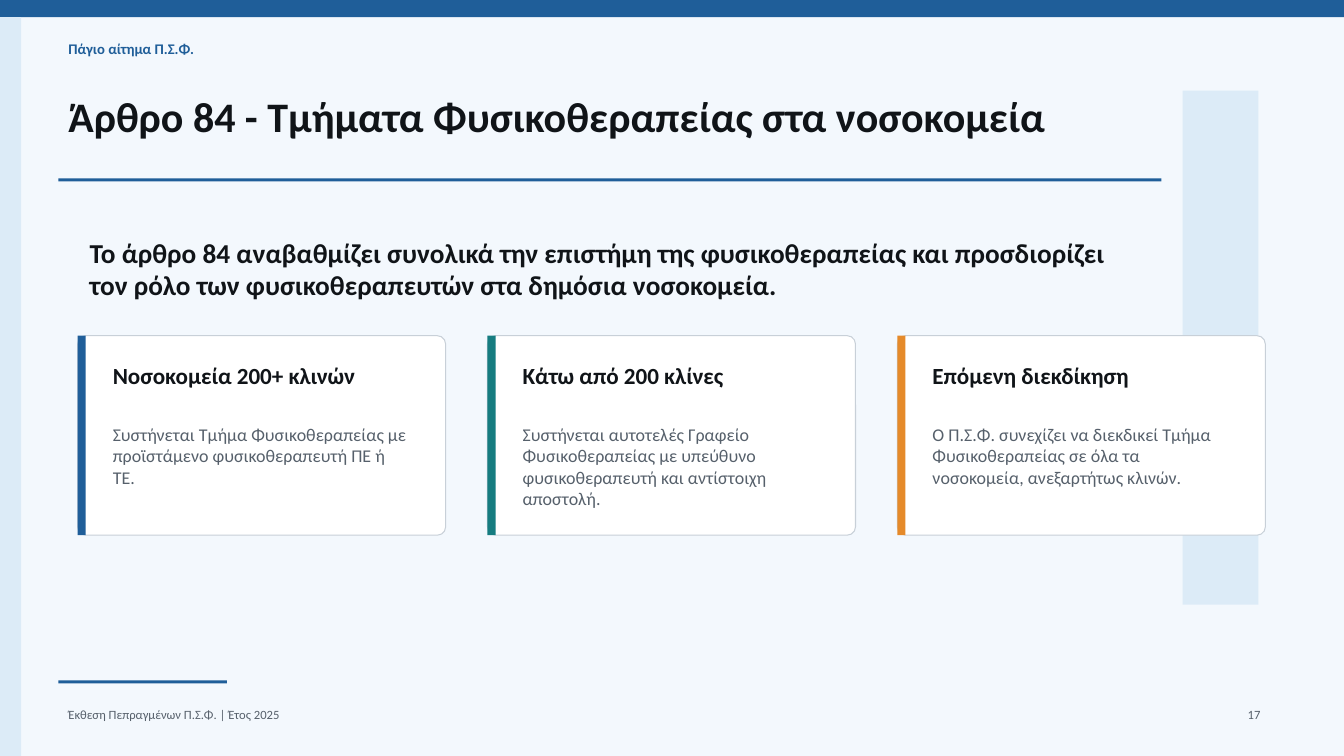
from dataclasses import dataclass

from pptx import Presentation
from pptx import util as u
from pptx.dml.color import RGBColor
from pptx.enum import shapes, text


@dataclass(frozen=True)
class Theme:
    font: str = "Calibri"
    background: str = "F3F8FD"
    blue: str = "1F5E99"
    pale: str = "DCEBF7"
    teal: str = "167C80"
    orange: str = "E58A2A"
    white: str = "FFFFFF"
    border: str = "C8D0D8"
    ink: str = "101418"
    muted: str = "56606B"
    title_size: float = 30
    lead_size: float = 19.5
    heading_size: float = 16.5
    body_size: float = 12.8
    label_size: float = 10.5
    footer_size: float = 9


@dataclass(frozen=True)
class Area:
    left: float
    top: float
    width: float
    height: float

    def lengths(self) -> tuple:
        return tuple(u.Inches(n) for n in (self.left, self.top, self.width, self.height))


@dataclass(frozen=True)
class Band:
    area: Area
    color: str


@dataclass(frozen=True)
class Card:
    heading: str
    body: str
    accent: str


THEME = Theme()
SLIDE_WIDTH, SLIDE_HEIGHT = 13.33, 7.5

BANDS = [
    Band(Area(0, 0, SLIDE_WIDTH, 0.17), THEME.blue),
    Band(Area(0, 0.17, 0.21, 7.33), THEME.pale),
    Band(Area(11.73, 0.9, 0.75, 5.1), THEME.pale),
    Band(Area(0.58, 1.77, 10.94, 0.03), THEME.blue),
    Band(Area(0.58, 6.75, 1.67, 0.03), THEME.blue),
]

CARDS = [
    Card("Νοσοκομεία 200+ κλινών",
         "Συστήνεται Τμήμα Φυσικοθεραπείας με προϊστάμενο φυσικοθεραπευτή ΠΕ ή ΤΕ.",
         THEME.blue),
    Card("Κάτω από 200 κλίνες",
         "Συστήνεται αυτοτελές Γραφείο Φυσικοθεραπείας με υπεύθυνο φυσικοθεραπευτή "
         "και αντίστοιχη αποστολή.",
         THEME.teal),
    Card("Επόμενη διεκδίκηση",
         "Ο Π.Σ.Φ. συνεχίζει να διεκδικεί Τμήμα Φυσικοθεραπείας σε όλα τα νοσοκομεία, "
         "ανεξαρτήτως κλινών.",
         THEME.orange),
]
CARD_ROW = Area(0.77, 3.33, 11.78, 1.98)
CARD_WIDTH = 3.65


def add_block(page, area: Area, fill: str, border: str | None = None,
              radius: float | None = None):
    """Draw a filled rectangle, rounded when a radius ratio is given."""
    kind = shapes.MSO_SHAPE.RECTANGLE if radius is None else shapes.MSO_SHAPE.ROUNDED_RECTANGLE
    block = page.shapes.add_shape(kind, *area.lengths())
    block.shadow.inherit = False
    block.fill.solid()
    block.fill.fore_color.rgb = RGBColor.from_string(fill)
    if radius is not None:
        block.adjustments[0] = radius
    if border is None:
        block.line.fill.background()
    else:
        block.line.color.rgb = RGBColor.from_string(border)
        block.line.width = u.Pt(0.75)
    return block


def add_text(page, area: Area, words: str, *, size: float, color: str = THEME.ink,
             bold: bool = False, align=text.PP_ALIGN.LEFT):
    box = page.shapes.add_textbox(*area.lengths())
    box.text_frame.word_wrap = True
    para = box.text_frame.paragraphs[0]
    para.alignment = align
    span = para.add_run()
    span.text = words
    span.font.name = THEME.font
    span.font.size = u.Pt(size)
    span.font.bold = bold
    span.font.color.rgb = RGBColor.from_string(color)
    return box


def add_card(page, card: Card, left: float) -> None:
    top, height = CARD_ROW.top, CARD_ROW.height
    add_block(page, Area(left, top, CARD_WIDTH, height), THEME.white,
              border=THEME.border, radius=0.042)
    add_block(page, Area(left, top, 0.08, height), card.accent)
    text_left, text_width = left + 0.25, CARD_WIDTH - 0.5
    add_text(page, Area(text_left, top + 0.21, text_width, 0.5), card.heading,
             size=THEME.heading_size, bold=True)
    add_text(page, Area(text_left, top + 0.82, text_width, 1.06), card.body,
             size=THEME.body_size, color=THEME.muted)


def main() -> None:
    deck = Presentation()
    deck.slide_width = u.Inches(SLIDE_WIDTH)
    deck.slide_height = u.Inches(SLIDE_HEIGHT)
    page = deck.slides.add_slide(deck.slide_layouts[6])
    page.background.fill.solid()
    page.background.fill.fore_color.rgb = RGBColor.from_string(THEME.background)

    for band in BANDS:
        add_block(page, band.area, band.color)

    add_text(page, Area(0.58, 0.35, 7.29, 0.29), "Πάγιο αίτημα Π.Σ.Φ.",
             size=THEME.label_size, color=THEME.blue, bold=True)
    add_text(page, Area(0.58, 0.85, 11.67, 0.85),
             "Άρθρο 84 - Τμήματα Φυσικοθεραπείας στα νοσοκομεία",
             size=THEME.title_size, bold=True)
    add_text(page, Area(0.79, 2.29, 10.52, 0.6),
             "Το άρθρο 84 αναβαθμίζει συνολικά την επιστήμη της φυσικοθεραπείας και "
             "προσδιορίζει τον ρόλο των φυσικοθεραπευτών στα δημόσια νοσοκομεία.",
             size=THEME.lead_size, bold=True)

    pitch = (CARD_ROW.width - CARD_WIDTH) / (len(CARDS) - 1)
    for index, card in enumerate(CARDS):
        add_card(page, card, CARD_ROW.left + index * pitch)

    add_text(page, Area(0.58, 6.96, 7.08, 0.25), "Έκθεση Πεπραγμένων Π.Σ.Φ. | Έτος 2025",
             size=THEME.footer_size, color=THEME.muted)
    add_text(page, Area(11.98, 6.96, 0.62, 0.25), "17", size=THEME.footer_size,
             color=THEME.muted, align=text.PP_ALIGN.RIGHT)
    deck.save("out.pptx")


if __name__ == "__main__":
    main()
